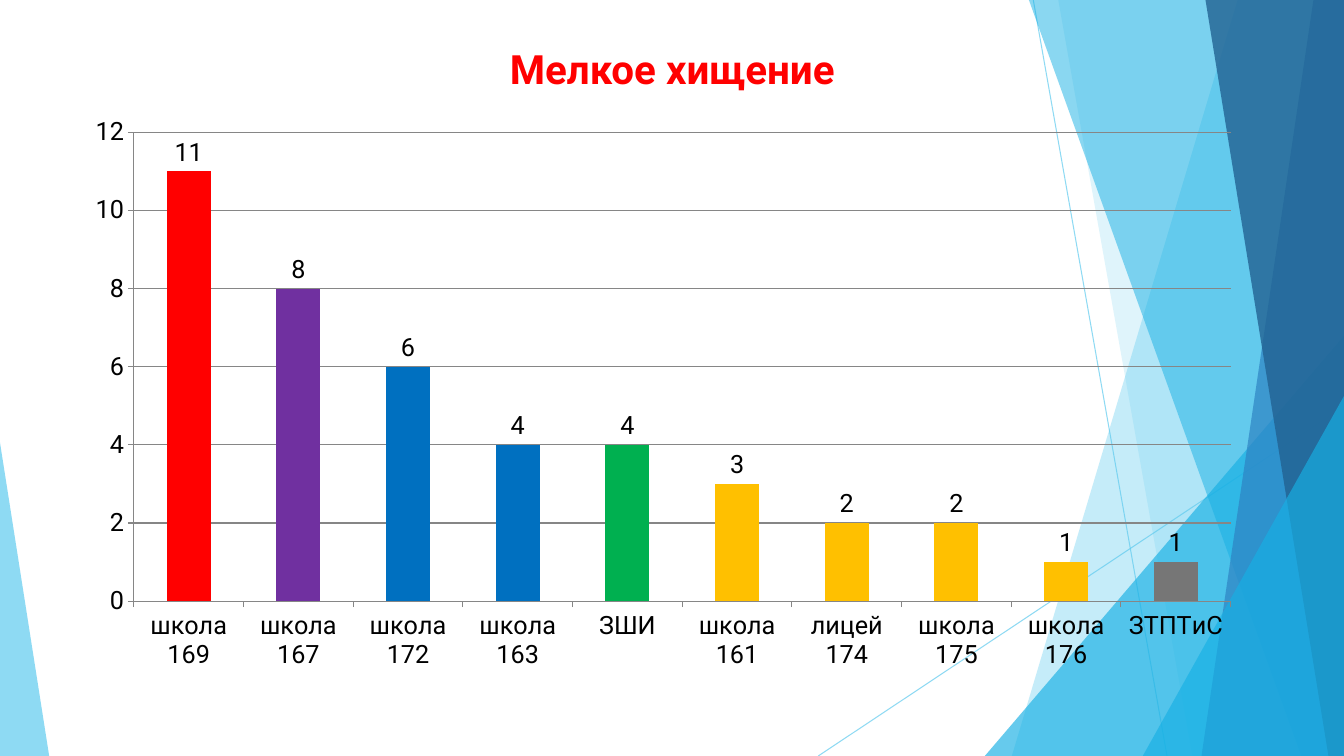
from lxml.etree import SubElement
from pptx import Presentation
from pptx.chart.data import CategoryChartData
from pptx.dml.color import RGBColor
from pptx.enum.chart import XL_CHART_TYPE, XL_LABEL_POSITION, XL_TICK_MARK
from pptx.enum.shapes import MSO_CONNECTOR, MSO_SHAPE
from pptx.enum.text import MSO_ANCHOR, MSO_AUTO_SIZE, PP_ALIGN
from pptx.oxml import parse_xml
from pptx.oxml.ns import nsdecls, qn
from pptx.util import Cm, Pt

FONT = "Roboto"
WIDTH, HEIGHT = 33.87, 19.05
BLACK = RGBColor(0x00, 0x00, 0x00)
RED = RGBColor(0xFF, 0x00, 0x00)
PURPLE = RGBColor(0x70, 0x30, 0xA0)
BLUE = RGBColor(0x00, 0x70, 0xC0)
GREEN = RGBColor(0x00, 0xB0, 0x50)
AMBER = RGBColor(0xFF, 0xC0, 0x00)
GRAY = RGBColor(0x76, 0x76, 0x76)
AXIS_GRAY = RGBColor(0x86, 0x86, 0x86)
SKY = RGBColor(0x5F, 0xCB, 0xEF)
CYAN = RGBColor(0x17, 0xB0, 0xE4)
STEEL = RGBColor(0x2E, 0x83, 0xC3)
NAVY = RGBColor(0x22, 0x62, 0x92)

THEFTS = [
    ("школа 169", 11, RED),
    ("школа 167", 8, PURPLE),
    ("школа 172", 6, BLUE),
    ("школа 163", 4, BLUE),
    ("ЗШИ", 4, GREEN),
    ("школа 161", 3, AMBER),
    ("лицей 174", 2, AMBER),
    ("школа 175", 2, AMBER),
    ("школа 176", 1, AMBER),
    ("ЗТПТиС", 1, GRAY),
]


class SlideBuilder:
    """Holds the slide and draws styled elements on it, in centimetres."""

    def __init__(self, presentation):
        """Add a title-only slide."""
        self.slide = presentation.slides.add_slide(presentation.slide_layouts[5])
        self.shapes = self.slide.shapes

    def set_opacity(self, fill, parent, percent):
        """Make a solid colour partly transparent."""
        color = parent.find(".//" + qn("a:srgbClr"))
        SubElement(color, qn("a:alpha"), val=str(percent * 1000))

    def paint(self, shape, color, opacity):
        """Fill a shape without outline or shadow."""
        shape.shadow.inherit = False
        shape.fill.solid()
        shape.fill.fore_color.rgb = color
        shape.line.fill.background()
        self.set_opacity(shape.fill, shape.element.spPr, opacity)

    def line(self, start, end):
        """Draw a thin decorative line."""
        connector = self.shapes.add_connector(
            MSO_CONNECTOR.STRAIGHT, *map(Cm, start + end)
        )
        connector.line.color.rgb = SKY
        connector.line.width = Pt(0.75)
        properties = connector.element.spPr
        self.set_opacity(connector.line.fill, properties, 70)
        SubElement(properties, qn("a:effectLst"))

    def band(self, top_left, bottom_left, color, opacity):
        """Draw a slanted band that reaches the right edge of the slide."""
        builder = self.shapes.build_freeform(Cm(top_left), Cm(0))
        corners = [(WIDTH, 0), (WIDTH, HEIGHT), (bottom_left, HEIGHT)]
        builder.add_line_segments([(Cm(x), Cm(y)) for x, y in corners], close=True)
        self.paint(builder.convert_to_shape(), color, opacity)

    def triangle(self, left, top, width, apex, color, opacity):
        """Draw a right triangle that stands on the bottom edge."""
        shape = self.shapes.add_shape(
            MSO_SHAPE.ISOSCELES_TRIANGLE,
            Cm(left), Cm(top), Cm(width), Cm(HEIGHT - top),
        )
        shape.adjustments[0] = apex
        self.paint(shape, color, opacity)

    def title(self, text, left, top, width, height):
        """Place and format the title placeholder."""
        shape = self.shapes.title
        shape.left, shape.top = Cm(left), Cm(top)
        shape.width, shape.height = Cm(width), Cm(height)
        frame = shape.text_frame
        frame.word_wrap = True
        frame.auto_size = MSO_AUTO_SIZE.NONE
        frame.vertical_anchor = MSO_ANCHOR.MIDDLE
        paragraph = frame.paragraphs[0]
        paragraph.alignment = PP_ALIGN.CENTER
        run = paragraph.add_run()
        run.text = text
        run.font.name = FONT
        run.font.size = Pt(28.8)
        run.font.bold = True
        run.font.color.rgb = RED

    def column_chart(self, rows, left, top, width, height):
        """Draw a column chart with one colour per column."""
        data = CategoryChartData()
        data.categories = [name for name, _, _ in rows]
        data.add_series("Series 1", [value for _, value, _ in rows])
        chart = self.shapes.add_chart(
            XL_CHART_TYPE.COLUMN_CLUSTERED,
            Cm(left), Cm(top), Cm(width), Cm(height), data,
        ).chart
        chart.has_legend = False
        chart.has_title = False
        chart.font.name = FONT
        chart.font.size = Pt(18)
        chart.font.color.rgb = BLACK
        self.style_axes(chart)
        self.style_columns(chart.plots[0], [color for _, _, color in rows])
        self.fix_plot_area(chart, x=0.052, y=0.046, w=0.93, h=0.816)

    def style_axes(self, chart):
        """Format both axes and the gridlines."""
        value_axis = chart.value_axis
        value_axis.minimum_scale, value_axis.maximum_scale = 0, 12
        value_axis.major_unit = 2
        value_axis.has_major_gridlines = True
        for axis in (chart.category_axis, value_axis):
            axis.major_tick_mark = XL_TICK_MARK.OUTSIDE
        for part in (chart.category_axis, value_axis, value_axis.major_gridlines):
            part.format.line.color.rgb = AXIS_GRAY
            part.format.line.width = Pt(0.75)

    def style_columns(self, plot, colors):
        """Colour the columns and show their values."""
        plot.gap_width = 150
        plot.vary_by_categories = False
        plot.has_data_labels = True
        plot.data_labels.show_value = True
        plot.data_labels.position = XL_LABEL_POSITION.OUTSIDE_END
        series = plot.series[0]
        series.format.fill.solid()
        series.format.fill.fore_color.rgb = colors[0]
        for index, color in enumerate(colors[1:], start=1):
            fill = series.points[index].format.fill
            fill.solid()
            fill.fore_color.rgb = color

    def fix_plot_area(self, chart, **fractions):
        """Set the inner plot area as fractions of the chart."""
        plot_area = chart.element.find(".//" + qn("c:plotArea"))
        for layout in plot_area.findall(qn("c:layout")):
            plot_area.remove(layout)
        sizes = "".join(f'<c:{key} val="{value}"/>' for key, value in fractions.items())
        plot_area.insert(0, parse_xml(
            f'<c:layout {nsdecls("c")}><c:manualLayout><c:layoutTarget val="inner"/>'
            '<c:xMode val="edge"/><c:yMode val="edge"/>'
            f"{sizes}</c:manualLayout></c:layout>"
        ))


def main():
    """Build and save the slide."""
    presentation = Presentation()
    presentation.slide_width, presentation.slide_height = Cm(WIDTH), Cm(HEIGHT)
    builder = SlideBuilder(presentation)
    builder.line((26.04, 0), (29.41, HEIGHT))
    builder.line((WIDTH, 10.24), (20.62, HEIGHT))
    builder.band(31.19, 25.5, SKY, 36)
    builder.band(26.67, 30.05, SKY, 20)
    builder.triangle(24.82, 8.46, 9.05, 1, CYAN, 66)
    builder.band(25.93, 32.79, CYAN, 50)
    builder.band(33.1, 30.28, STEEL, 70)
    builder.band(30.38, 33.48, NAVY, 80)
    builder.triangle(28.8, 9.98, 5.07, 1, CYAN, 66)
    builder.triangle(0, 11.15, 1.24, 0, SKY, 70)
    builder.title("Мелкое хищение", 2.34, 1.02, 29.21, 1.42)
    builder.column_chart(THEFTS, 1.83, 2.67, 29.72, 14.48)
    presentation.save("out.pptx")


if __name__ == "__main__":
    main()
